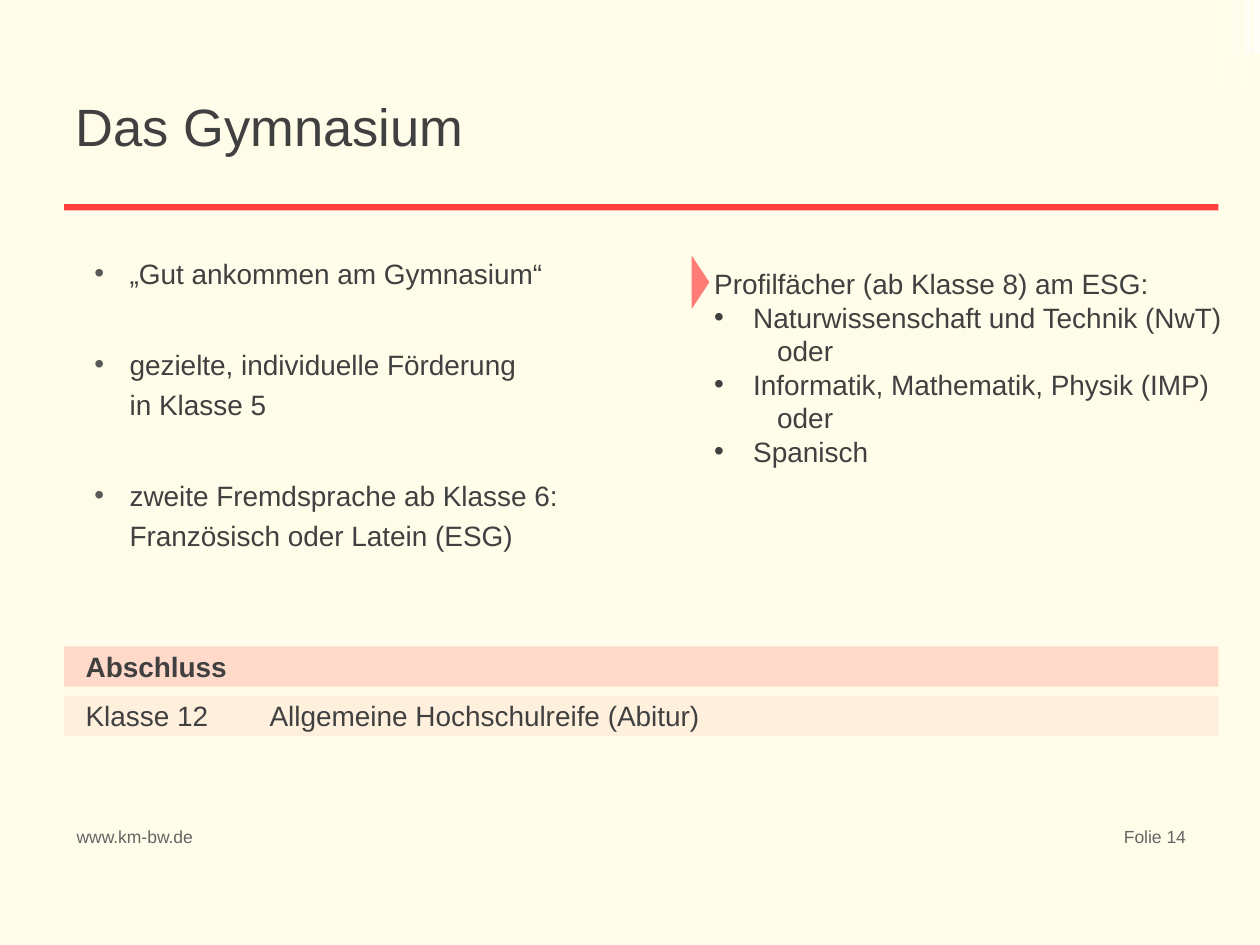
import pptx
import pptx.util
import pptx.dml.color
import pptx.enum.shapes
import pptx.enum.text
import pptx.oxml.ns
from lxml import etree

Inches = pptx.util.Inches
Pt = pptx.util.Pt
SHAPES = pptx.enum.shapes.MSO_SHAPE
ALIGN = pptx.enum.text.PP_ALIGN
MIDDLE = pptx.enum.text.MSO_ANCHOR.MIDDLE
TOP = pptx.enum.text.MSO_ANCHOR.TOP
qn = pptx.oxml.ns.qn


def color(value):
    return pptx.dml.color.RGBColor.from_string(value)


class SlideBuilder:
    """Holds the style and the current slide and adds each kind of element."""

    font_name = "Arial"
    ink = "404040"
    muted = "646464"
    accent = "FF4040"

    def __init__(self, slide):
        self.slide = slide

    def background(self, value):
        fill = self.slide.background.fill
        fill.solid()
        fill.fore_color.rgb = color(value)

    def style_paragraph(self, paragraph, text, size=16, ink=None, bold=False,
                        bullet=None, indent=0, **layout):
        if bullet:
            properties = paragraph._p.get_or_add_pPr()
            properties.set("marL", str(Inches(indent)))
            properties.set("indent", str(-Inches(layout.pop("hanging", indent))))
            bullet_color = etree.SubElement(properties, qn("a:buClr"))
            etree.SubElement(bullet_color, qn("a:srgbClr"), val=bullet)
            etree.SubElement(properties, qn("a:buFont"), typeface=self.font_name)
            etree.SubElement(properties, qn("a:buChar"), char="•")
        paragraph.text = text
        for name, value in ({"alignment": ALIGN.LEFT} | layout).items():
            setattr(paragraph, name, value)
        look = {"name": self.font_name, "size": Pt(size), "bold": bold}
        for run in paragraph.runs:
            for name, value in look.items():
                setattr(run.font, name, value)
            run.font.color.rgb = color(ink or self.ink)

    def fill_frame(self, frame, entries, **frame_format):
        for name, value in ({"word_wrap": True} | frame_format).items():
            setattr(frame, name, value)
        for index, (text, style) in enumerate(entries):
            paragraph = frame.add_paragraph() if index else frame.paragraphs[0]
            self.style_paragraph(paragraph, text, **style)

    def title(self, text, *box):
        heading = self.slide.shapes.title
        places = map(Inches, box)
        for name, value in zip(("left", "top", "width", "height"), places):
            setattr(heading, name, value)
        self.fill_frame(heading.text_frame, [(text, {"size": 30})], vertical_anchor=MIDDLE)

    def text(self, box, entries, **frame_format):
        label = self.slide.shapes.add_textbox(*map(Inches, box))
        self.fill_frame(label.text_frame, entries, **frame_format)

    def shape(self, kind, box, fill=None, opacity=100, adjustment=None):
        figure = self.slide.shapes.add_shape(kind, *map(Inches, box))
        figure.shadow.inherit = False
        figure.line.fill.background()
        if adjustment is not None:
            figure.adjustments[0] = adjustment
        if fill is None:
            figure.fill.background()
            return figure
        figure.fill.solid()
        figure.fill.fore_color.rgb = color(fill)
        if opacity < 100:
            tint = figure._element.spPr.find(".//" + qn("a:srgbClr"))
            etree.SubElement(tint, qn("a:alpha"), val=str(opacity * 1000))
        return figure

    def table(self, box, widths, rows):
        grid = self.slide.shapes.add_table(len(rows), len(widths), *map(Inches, box)).table
        for name in ("first_row", "horz_banding"):
            setattr(grid, name, False)
        for column, width in zip(grid.columns, widths):
            column.width = Inches(width)
        for r, row in enumerate(rows):
            for c in range(len(widths)):
                cell = grid.cell(r, c)
                properties = cell._tc.get_or_add_tcPr()
                for side in ("lnL", "lnR", "lnT", "lnB"):
                    border = etree.SubElement(properties, qn("a:" + side))
                    etree.SubElement(border, qn("a:noFill"))
                cell.fill.background()
                if c < len(row):
                    self.style_paragraph(cell.text_frame.paragraphs[0], row[c], bold=r == 0)
            if len(row) == 1:
                grid.cell(r, 0).merge(grid.cell(r, len(widths) - 1))


def main():
    deck = pptx.Presentation()
    deck.slide_width, deck.slide_height = Inches(10), Inches(7.5)
    builder = SlideBuilder(deck.slides.add_slide(deck.slide_layouts[5]))
    builder.background("FFFDE9")

    corner_strips = [
        (9.89, 0.03, 0.43, 65), (9.94, 0.06, 0.43, 65), (9.7, 0.01, 0.64, 30),
        (9.87, 0.01, 0.68, 60), (9.75, 0.06, 0.43, 20), (9.82, 0.03, 0.43, 40),
    ]
    for left, width, height, opacity in corner_strips:
        builder.shape(SHAPES.RECTANGLE, (left, 0, width, height), "FFFFFF", opacity)

    bands = [
        (5.13, 0.32, builder.accent, 18),
        (5.52, 0.32, "FF7F7F", 10),
        (1.62, 0.05, builder.accent, 100),
    ]
    for top, height, fill, opacity in bands:
        builder.shape(SHAPES.RECTANGLE, (0.51, top, 9.16, height), fill, opacity)

    footers = [
        (0.51, 1.33, "www.km-bw.de", ALIGN.LEFT),
        (8.54, 0.97, "Folie 14", ALIGN.RIGHT),
    ]
    for left, width, text, alignment in footers:
        style = {"size": 10, "ink": builder.muted, "alignment": alignment}
        builder.text((left, 6.51, width, 0.39), [(text, style)])

    builder.title("Das Gymnasium", 0.5, 0.61, 9, 0.77)

    offers = [
        "„Gut ankommen am Gymnasium“",
        "gezielte, individuelle Förderung \vin Klasse 5",
        "zweite Fremdsprache ab Klasse 6: Französisch oder Latein (ESG)",
    ]
    offer_style = {"bullet": "595959", "indent": 0.4, "hanging": 0.28, "line_spacing": 1.2}
    builder.text(
        (0.53, 1.93, 4.88, 2.91),
        [(offer, offer_style | {"space_before": Pt(29 if index else 0)})
         for index, offer in enumerate(offers)],
        margin_right=Inches(0.59), vertical_anchor=TOP)

    builder.table((0.58, 5.13, 8.43, 0.78), (1.46, 6.97),
                  [["Abschluss"], ["Klasse 12", "Allgemeine Hochschulreife (Abitur)"]])

    builder.shape(SHAPES.PENTAGON, (5.49, 2.03, 0.14, 0.42), builder.accent, 68, 0.99)

    subject = {"bullet": builder.ink, "indent": 0.31}
    profile_subjects = [
        ("Profilfächer (ab Klasse 8) am ESG:", {}),
        ("Naturwissenschaft und Technik (NwT)", subject),
        ("\toder", {}),
        ("Informatik, Mathematik, Physik (IMP)", subject),
        ("\toder", {}),
        ("Spanisch", subject),
    ]
    profile = builder.shape(SHAPES.ROUNDED_RECTANGLE, (5.57, 2.01, 4.43, 1.81), adjustment=0)
    builder.fill_frame(profile.text_frame, profile_subjects, vertical_anchor=MIDDLE)

    deck.save("out.pptx")


if __name__ == "__main__":
    main()
